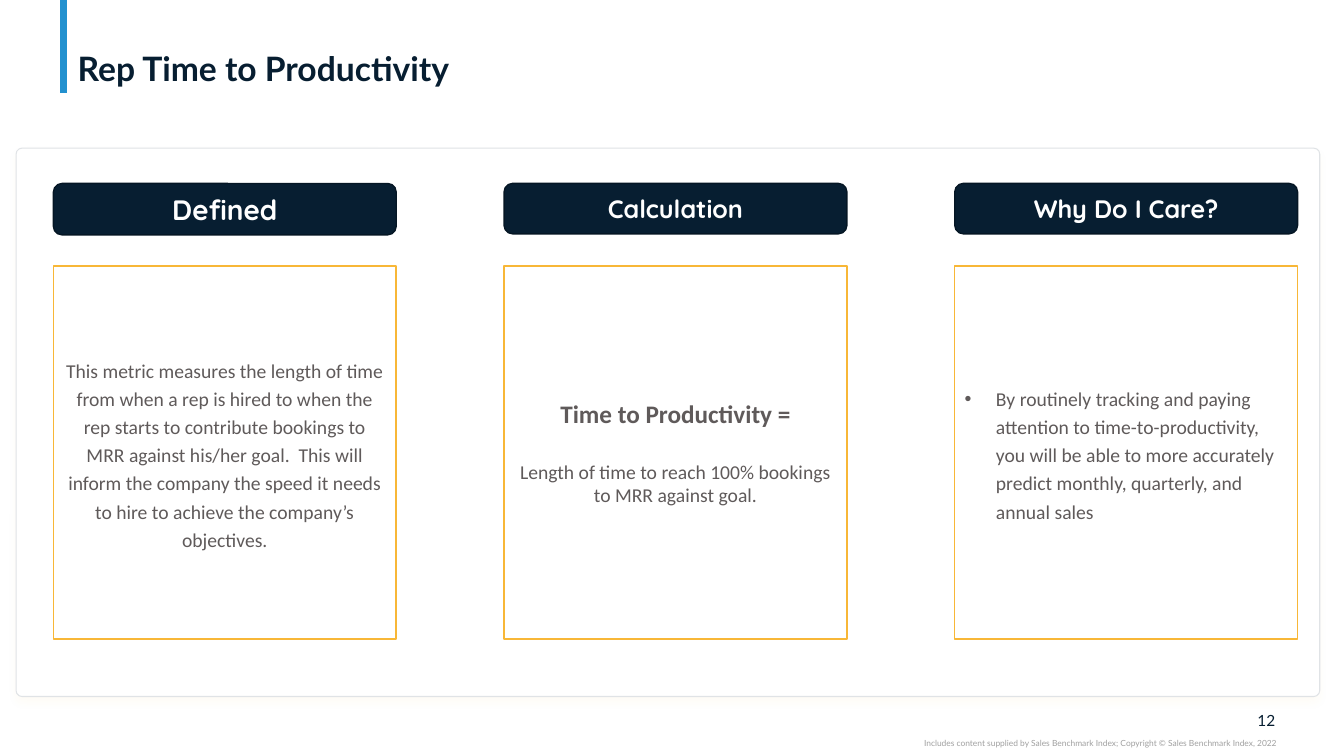
from lxml import etree
from pptx import Presentation
from pptx.dml.color import RGBColor
from pptx.enum.shapes import MSO_CONNECTOR, MSO_SHAPE
from pptx.enum.text import MSO_ANCHOR, MSO_AUTO_SIZE, PP_ALIGN
from pptx.oxml.ns import qn
from pptx.util import Inches, Pt

RECT, ROUNDED = MSO_SHAPE.RECTANGLE, MSO_SHAPE.ROUNDED_RECTANGLE
LEFT, CENTER, RIGHT = PP_ALIGN.LEFT, PP_ALIGN.CENTER, PP_ALIGN.RIGHT
TOP, MIDDLE, BOTTOM = MSO_ANCHOR.TOP, MSO_ANCHOR.MIDDLE, MSO_ANCHOR.BOTTOM

COLUMN_LEFT, COLUMN_STEP, COLUMN_WIDTH = 0.53, 4.47, 3.4


def color(value):
    return RGBColor.from_string(value)


def add_element(parent, tag, **attributes):
    return etree.SubElement(parent, qn(tag), attributes)


class MetricPage:
    NAVY, EDGE, BLUE, AMBER = "071E31", "051624", "2391CF", "F8B737"
    WHITE, PANEL_EDGE, BODY, FOOTNOTE = "FFFFFF", "E0E3E6", "5F5A5A", "A0A0A0"
    MAIN, HEADING, TEXT = "Lato", "Quicksand", "Calibri"

    def __init__(self, deck):
        self.page = deck.slides.add_slide(deck.slide_layouts[5])
        self.shapes = self.page.shapes

    def style(self, para, font, size, ink, bold=False, align=LEFT, spacing=1.0):
        para.alignment = align
        para.line_spacing = spacing
        for span in para.runs:
            span.font.name = font
            span.font.size = Pt(size)
            span.font.bold = bold
            span.font.color.rgb = color(ink)

    def frame(self, box, anchor, side=0.1, edge=0.05):
        frame = box.text_frame
        frame.word_wrap = True
        frame.auto_size = MSO_AUTO_SIZE.NONE
        frame.vertical_anchor = anchor
        frame.margin_left = frame.margin_right = Inches(side)
        frame.margin_top = frame.margin_bottom = Inches(edge)
        return frame

    def title(self, text):
        box = self.shapes.title
        box.left, box.top = Inches(0.67), Inches(0.04)
        box.width, box.height = Inches(11.99), Inches(0.84)
        frame = self.frame(box, BOTTOM, edge=0)
        frame.text = text
        self.style(frame.paragraphs[0], self.MAIN, 24, self.NAVY, True, spacing=0.9)

    def accent(self):
        x = Inches(0.63)
        line = self.shapes.add_connector(MSO_CONNECTOR.STRAIGHT, x, 0, x, Inches(0.92))
        line.line.color.rgb = color(self.BLUE)
        line.line.width = Pt(5)
        add_element(line._element.spPr, "a:effectLst")

    def label(self, text, left, top, width, height, size, ink, anchor):
        """Add a right-aligned footer text."""
        box = self.shapes.add_textbox(
            Inches(left), Inches(top), Inches(width), Inches(height))
        frame = self.frame(box, anchor, 0, 0)
        frame.text = text
        self.style(frame.paragraphs[0], self.MAIN, size, ink, align=RIGHT)

    def shape(self, kind, left, top, width, height, fill, edge, weight=1):
        shape = self.shapes.add_shape(
            kind, Inches(left), Inches(top), Inches(width), Inches(height))
        shape.shadow.inherit = False
        shape.fill.solid()
        shape.fill.fore_color.rgb = color(fill)
        shape.line.color.rgb = color(edge)
        shape.line.width = Pt(weight)
        return shape

    def panel(self):
        """Add the wide white card with a faint amber shadow below it."""
        card = self.shape(ROUNDED, 0.16, 1.47, 12.93, 5.44,
                          self.WHITE, self.PANEL_EDGE, 0.75)
        card.adjustments[0] = 0.011
        effects = card._element.spPr.find(qn("a:effectLst"))
        shadow = add_element(effects, "a:outerShdw", blurRad=str(Pt(6)),
                             dist=str(Pt(4)), dir="5400000", rotWithShape="0")
        tint = add_element(shadow, "a:srgbClr", val=self.AMBER)
        add_element(tint, "a:alpha", val="4000")

    def heading(self, left, text, size, height):
        box = self.shape(ROUNDED, left, 1.82, COLUMN_WIDTH, height, self.NAVY, self.EDGE)
        frame = self.frame(box, MIDDLE)
        frame.text = text
        self.style(frame.paragraphs[0], self.HEADING, size, self.WHITE, True, CENTER)

    def body(self, left, lines, align, spacing, bullet):
        """Add a framed text; each line is (text, size, bold, space before)."""
        box = self.shape(RECT, left, 2.64, COLUMN_WIDTH, 3.7, self.WHITE, self.AMBER)
        frame = self.frame(box, MIDDLE)
        frame.text = "\n".join(line[0] for line in lines)
        for para, (_, size, bold, before) in zip(frame.paragraphs, lines):
            self.style(para, self.TEXT, size, self.BODY, bold, align, spacing)
            if before:
                para.space_before = Pt(before)
            if bullet:
                self.bullet(para)

    def bullet(self, para):
        props = para._p.get_or_add_pPr()
        props.set("marL", str(Inches(0.31)))
        props.set("indent", str(-Inches(0.31)))
        add_element(props, "a:buFont", typeface="Arial")
        add_element(props, "a:buChar", char="•")


COLUMNS = [
    ("Defined", 20, 0.51, CENTER, 1.2, False, [
        ("This metric measures the length of time from when a rep is hired to when "
         "the rep starts to contribute bookings to MRR against his/her goal.  This "
         "will inform the company the speed it needs to hire to achieve the "
         "company’s objectives.", 14, False, 0)]),
    ("Calculation", 18, 0.5, CENTER, 1.0, False, [
        ("Time to Productivity =", 18, True, 0),
        ("Length of time to reach 100% bookings to MRR against goal.", 14, False, 22)]),
    ("Why Do I Care?", 18, 0.5, LEFT, 1.2, True, [
        ("By routinely tracking and paying attention to time-to-productivity, you "
         "will be able to more accurately predict monthly, quarterly, and annual "
         "sales", 14, False, 0)]),
]


def main():
    deck = Presentation()
    deck.slide_width, deck.slide_height = Inches(13.33), Inches(7.5)
    page = MetricPage(deck)
    page.accent()
    page.label("12", 12.32, 7.05, 0.33, 0.19, 11, page.NAVY, MIDDLE)
    page.label("Includes content supplied by Sales Benchmark Index; "
               "Copyright © Sales Benchmark Index, 2022",
               7.5, 7.32, 5.16, 0.1, 6, page.FOOTNOTE, TOP)
    page.title("Rep Time to Productivity")
    page.panel()
    for index, (name, size, height, align, spacing, bullet, lines) in enumerate(COLUMNS):
        left = COLUMN_LEFT + index * COLUMN_STEP
        page.heading(left, name, size, height)
        page.body(left, lines, align, spacing, bullet)
    deck.save("out.pptx")


if __name__ == "__main__":
    main()
